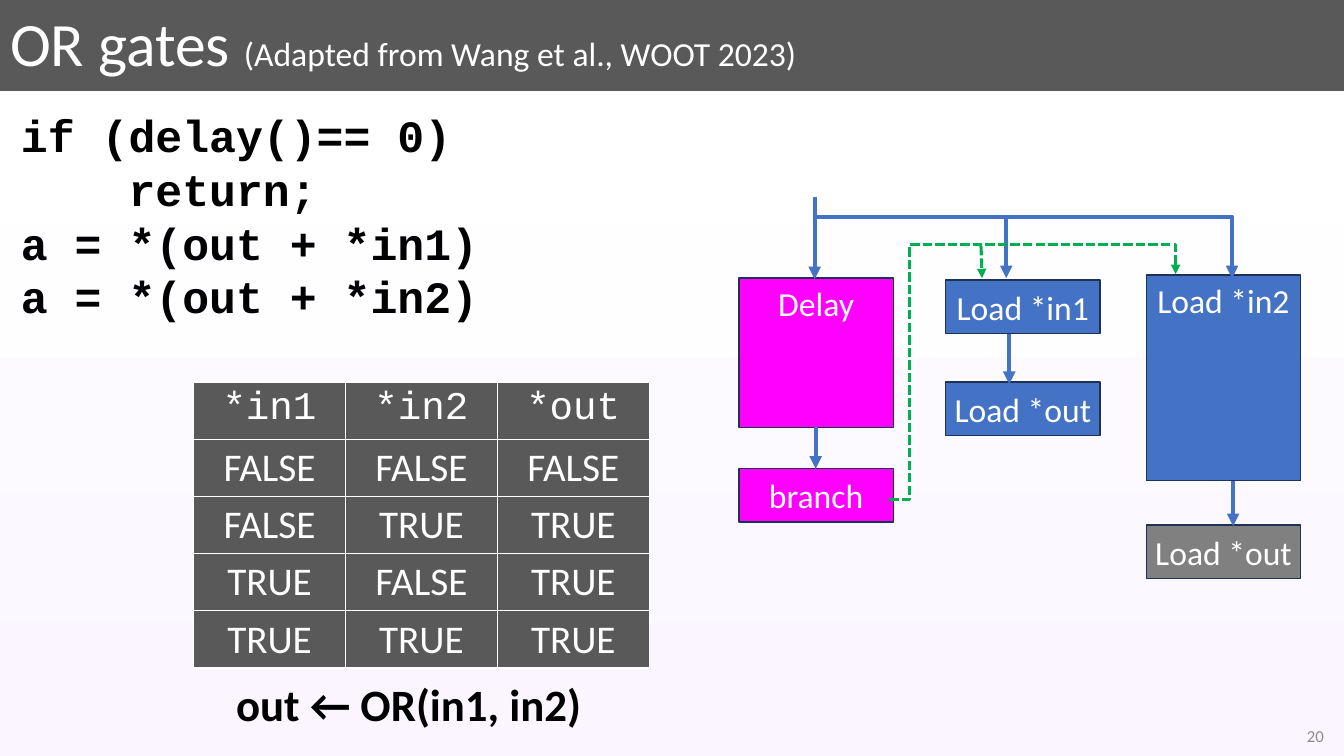
from lxml.etree import SubElement
from pptx import Presentation
from pptx.dml.color import RGBColor
from pptx.enum.dml import MSO_LINE
from pptx.enum.shapes import MSO_CONNECTOR, MSO_SHAPE
from pptx.enum.text import MSO_ANCHOR, MSO_AUTO_SIZE, PP_ALIGN
from pptx.oxml.ns import qn
from pptx.util import Inches, Pt

# Content
COLORS = {"bar": "595959", "white": "FFFFFF", "lilac": "FAF5FF", "black": "000000",
          "blue": "4472C4", "navy": "1E3256", "magenta": "FF00FF", "gray": "808080",
          "green": "00B050", "number": "8C8C8C"}
TITLE = [("OR gates ", 44), ("(Adapted from Wang et al., WOOT 2023)", 24)]
BACKGROUND_STOPS = [(0, "bar"), (12, "bar"), (12, "white"), (100, "lilac")]
CODE = ["if (delay()== 0)", "    return;", "a = *(out + *in1)", "a = *(out + *in2)"]
TRUTH_TABLE = [
    ("*in1", "*in2", "*out"),
    ("FALSE", "FALSE", "FALSE"),
    ("FALSE", "TRUE", "TRUE"),
    ("TRUE", "FALSE", "TRUE"),
    ("TRUE", "TRUE", "TRUE"),
]
CAPTION = "out ← OR(in1, in2)"
SLIDE_NUMBER = "20"

# Diagram: label, left, top, height, fill, anchor
BOX_WIDTH, BOX_HEIGHT = 1.53, 0.53
DELAY_X, IN1_X, IN2_X = 7.33, 9.38, 11.37
BOXES = [
    ("Delay", DELAY_X, 2.76, 1.48, "magenta", MSO_ANCHOR.TOP),
    ("branch", DELAY_X, 4.65, BOX_HEIGHT, "magenta", MSO_ANCHOR.MIDDLE),
    ("Load *in1", IN1_X, 2.78, BOX_HEIGHT, "blue", MSO_ANCHOR.MIDDLE),
    ("Load *out", IN1_X, 3.79, BOX_HEIGHT, "blue", MSO_ANCHOR.MIDDLE),
    ("Load *in2", IN2_X, 2.73, 2.04, "blue", MSO_ANCHOR.TOP),
    ("Load *out", IN2_X, 5.21, BOX_HEIGHT, "gray", MSO_ANCHOR.MIDDLE),
]
# Arrows as point lists; the split is the height where the flow fans out
SPLIT_Y = 2.15
FLOW_ARROWS = [
    [(8.08, 1.95), (8.08, 2.77)],
    [(8.09, SPLIT_Y), (9.98, SPLIT_Y), (9.98, 2.76)],
    [(9.98, SPLIT_Y), (12.22, SPLIT_Y), (12.22, 2.76)],
    [(8.09, 4.24), (8.09, 4.65)],
    [(10.01, 3.31), (10.01, 3.81)],
    [(12.23, 4.77), (12.23, 5.22)],
]
SQUASH_ARROWS = [
    [(8.82, 4.96), (9.02, 4.96), (9.02, 2.43), (11.66, 2.43), (11.66, 2.72)],
    [(9.73, 2.44), (9.74, 2.76)],
]


def rgb(name):
    return RGBColor.from_string(COLORS[name])


def add_run(paragraph, text, size, color, font="Calibri", bold=False):
    run = paragraph.add_run()
    run.text = text
    run.font.name, run.font.size, run.font.bold = font, Pt(size), bold
    run.font.color.rgb = rgb(color)


def add_text(slide, box, lines, size, color, align, font="Calibri", bold=False,
             anchor=MSO_ANCHOR.TOP):
    frame = slide.shapes.add_textbox(*map(Inches, box)).text_frame
    frame.word_wrap = True
    frame.vertical_anchor = anchor
    for index, line in enumerate(lines):
        paragraph = frame.add_paragraph() if index else frame.paragraphs[0]
        paragraph.alignment = align
        add_run(paragraph, line, size, color, font, bold)


def add_background(slide):
    fill = slide.background.fill
    fill.gradient()
    fill.gradient_angle = 270
    stops = slide.element.xpath(".//p:bg//a:gsLst")[0]
    for stop in list(stops):
        stops.remove(stop)
    for percent, color in BACKGROUND_STOPS:
        stop = SubElement(stops, qn("a:gs"), pos=str(percent * 1000))
        SubElement(stop, qn("a:srgbClr"), val=COLORS[color])


def add_title(slide):
    title = slide.shapes.title
    title.left, title.top, title.width, title.height = map(Inches, (0, 0, 13.23, 0.92))
    frame = title.text_frame
    frame.auto_size = MSO_AUTO_SIZE.NONE
    frame.vertical_anchor = MSO_ANCHOR.MIDDLE
    paragraph = frame.paragraphs[0]
    paragraph.alignment = PP_ALIGN.LEFT
    paragraph.line_spacing = 0.9
    for text, size in TITLE:
        add_run(paragraph, text, size, "white")


def add_border(cell):
    properties = cell._tc.get_or_add_tcPr()
    for index, side in enumerate(("lnL", "lnR", "lnT", "lnB")):
        line = properties.makeelement(qn(f"a:{side}"), {"w": str(Pt(1))})
        fill = SubElement(line, qn("a:solidFill"))
        SubElement(fill, qn("a:srgbClr"), val=COLORS["white"])
        properties.insert(index, line)


def add_truth_table(slide):
    row_count, column_count = len(TRUTH_TABLE), len(TRUTH_TABLE[0])
    table = slide.shapes.add_table(row_count, column_count, Inches(1.92), Inches(3.79),
                                   Inches(4.52), Inches(2.83)).table
    for row, values in enumerate(TRUTH_TABLE):
        for column, value in enumerate(values):
            cell = table.cell(row, column)
            cell.fill.solid()
            cell.fill.fore_color.rgb = rgb("bar")
            add_border(cell)
            paragraph = cell.text_frame.paragraphs[0]
            paragraph.alignment = PP_ALIGN.CENTER
            add_run(paragraph, value, 28, "white", "Calibri" if row else "Courier New")


def add_box(slide, label, left, top, height, color, anchor):
    shape = slide.shapes.add_shape(MSO_SHAPE.RECTANGLE, Inches(left), Inches(top),
                                   Inches(BOX_WIDTH), Inches(height))
    shape.shadow.inherit = False
    shape.fill.solid()
    shape.fill.fore_color.rgb = rgb(color)
    shape.line.color.rgb = rgb("navy")
    shape.line.width = Pt(1)
    frame = shape.text_frame
    frame.word_wrap = True
    frame.margin_left = frame.margin_right = Inches(0.04)
    frame.vertical_anchor = anchor
    paragraph = frame.paragraphs[0]
    paragraph.alignment = PP_ALIGN.CENTER
    add_run(paragraph, label, 24, "white")


def add_arrow(slide, points, color, width, dash=None):
    corners = [(Inches(x), Inches(y)) for x, y in points]
    if len(corners) == 2:
        arrow = slide.shapes.add_connector(MSO_CONNECTOR.STRAIGHT, *corners[0], *corners[1])
        SubElement(arrow.element.spPr, qn("a:effectLst"))
    else:
        builder = slide.shapes.build_freeform(*corners[0])
        builder.add_line_segments(corners[1:], close=False)
        arrow = builder.convert_to_shape()
        arrow.fill.background()
        arrow.shadow.inherit = False
    arrow.line.color.rgb = rgb(color)
    arrow.line.width = Pt(width)
    if dash:
        arrow.line.dash_style = dash
    SubElement(arrow.element.xpath(".//a:ln")[0], qn("a:tailEnd"), type="triangle")


def main():
    presentation = Presentation()
    presentation.slide_width, presentation.slide_height = Inches(13.33), Inches(7.5)
    slide = presentation.slides.add_slide(presentation.slide_layouts[5])
    add_background(slide)
    add_title(slide)

    # Code, truth table and caption
    add_text(slide, (0.11, 1.02, 5.96, 2.26), CODE, 32, "black", PP_ALIGN.LEFT,
             "Courier New", True)
    add_truth_table(slide)
    add_text(slide, (1.92, 6.66, 4.27, 0.64), [CAPTION], 32, "black", PP_ALIGN.CENTER,
             bold=True)
    add_text(slide, (10.23, 7.1, 3, 0.4), [SLIDE_NUMBER], 12, "number", PP_ALIGN.RIGHT,
             anchor=MSO_ANCHOR.MIDDLE)

    # Gate diagram
    for box in BOXES:
        add_box(slide, *box)
    for points in FLOW_ARROWS:
        add_arrow(slide, points, "blue", 3)
    for points in SQUASH_ARROWS:
        add_arrow(slide, points, "green", 2.25, MSO_LINE.SQUARE_DOT)

    presentation.save("out.pptx")


if __name__ == "__main__":
    main()
